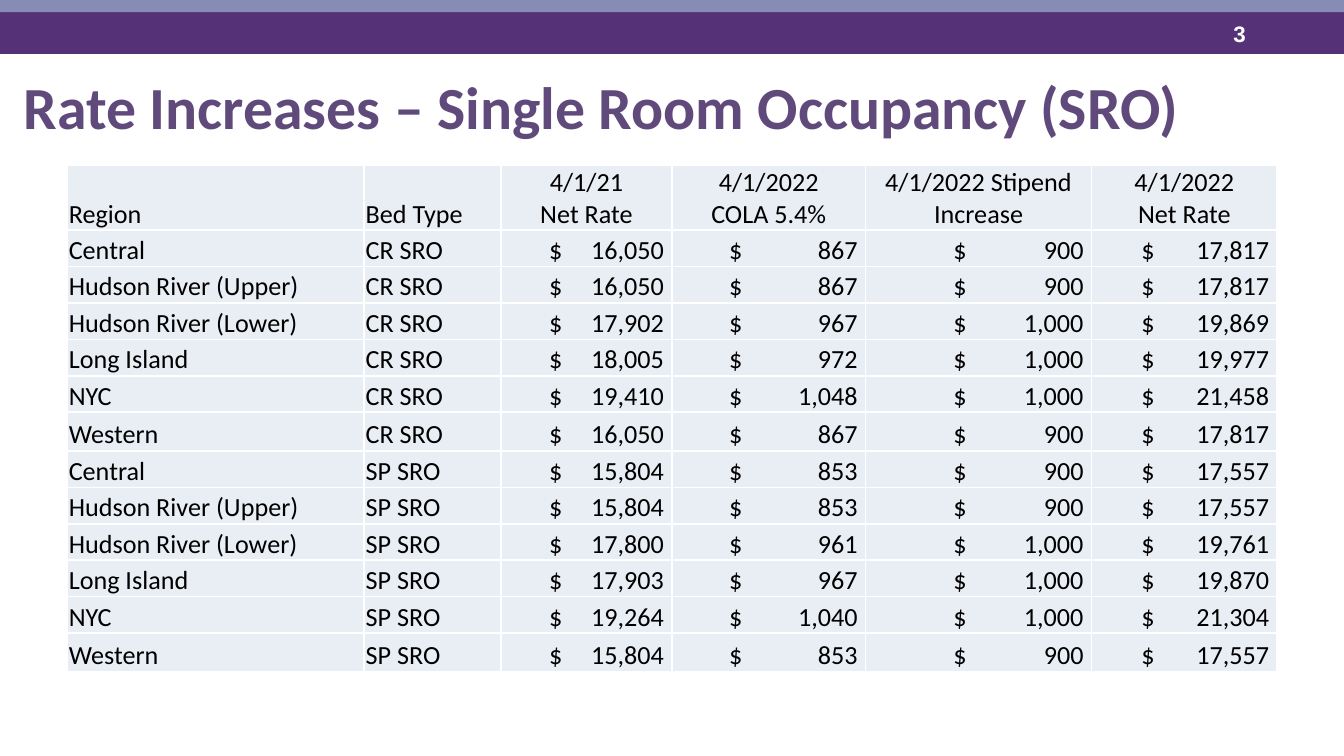
from lxml import etree
from pptx import Presentation
from pptx import util as u
from pptx.dml.color import RGBColor
from pptx.enum import shapes, text
from pptx.oxml import ns

COLORS = {
    "band": "553278",
    "stripe": "878CB4",
    "title": "604A7B",
    "cell": "E9EDF4",
    "ink": "000000",
    "white": "FFFFFF",
}

HEADERS = ["Region", "Bed Type", "4/1/21\nNet Rate", "4/1/2022\nCOLA 5.4%",
           "4/1/2022 Stipend Increase", "4/1/2022\nNet Rate"]
RATES = [
    ("Central", "CR SRO", 16050, 867, 900, 17817),
    ("Hudson River (Upper)", "CR SRO", 16050, 867, 900, 17817),
    ("Hudson River (Lower)", "CR SRO", 17902, 967, 1000, 19869),
    ("Long Island", "CR SRO", 18005, 972, 1000, 19977),
    ("NYC", "CR SRO", 19410, 1048, 1000, 21458),
    ("Western", "CR SRO", 16050, 867, 900, 17817),
    ("Central", "SP SRO", 15804, 853, 900, 17557),
    ("Hudson River (Upper)", "SP SRO", 15804, 853, 900, 17557),
    ("Hudson River (Lower)", "SP SRO", 17800, 961, 1000, 19761),
    ("Long Island", "SP SRO", 17903, 967, 1000, 19870),
    ("NYC", "SP SRO", 19264, 1040, 1000, 21304),
    ("Western", "SP SRO", 15804, 853, 900, 17557),
]
COL_WIDTHS = [5.61, 2.59, 3.23, 3.66, 4.27, 3.51]
DOLLAR_TABS = [None, None, 0.88, 1.05, 1.63, 0.91]
HEADER_HEIGHT, ROW_HEIGHT, GROUP_END_HEIGHT = 1.21, 0.69, 0.73
INSET = 0.03
AMOUNT_GAP = 0.15  # from the end of an amount to the cell's right edge


def rgb(name):
    return RGBColor.from_string(COLORS[name])


def style(p, font, size, color, bold=False):
    p.font.name = font
    p.font.size = u.Pt(size)
    p.font.bold = bold
    p.font.color.rgb = rgb(color)


def add_bar(s, x, y, w, h, color):
    sp = s.shapes.add_shape(shapes.MSO_SHAPE.RECTANGLE,
                            u.Cm(x), u.Cm(y), u.Cm(w), u.Cm(h))
    sp.shadow.inherit = False
    sp.fill.solid()
    sp.fill.fore_color.rgb = rgb(color)
    sp.line.fill.background()


def add_label(s, x, y, w, h, label, font, size, color):
    """Bold text, left-aligned and centred in the height of its box."""
    tf = s.shapes.add_textbox(u.Cm(x), u.Cm(y), u.Cm(w), u.Cm(h)).text_frame
    tf.word_wrap = True
    tf.vertical_anchor = text.MSO_ANCHOR.MIDDLE
    tf.text = label
    style(tf.paragraphs[0], font, size, color, bold=True)


def add_banner(s, x, y, w):
    add_bar(s, x, y + 0.18, w, 0.84, "band")
    add_label(s, x + w - 2.34, y + 0.25, 1.9, 0.76, "3", "Arial", 12, "white")
    add_bar(s, x, y, w, 0.23, "stripe")


def set_tabs(p, stops):
    tabs = etree.SubElement(p._p.get_or_add_pPr(), ns.qn("a:tabLst"))
    for pos, algn in stops:
        etree.SubElement(tabs, ns.qn("a:tab"), pos=str(u.Cm(pos)), algn=algn)


def set_borders(cell, color):
    tc_pr = cell._tc.get_or_add_tcPr()
    for i, side in enumerate(("lnL", "lnR", "lnT", "lnB")):
        ln = etree.Element(ns.qn(f"a:{side}"), w=str(u.Pt(1)))
        fill = etree.SubElement(ln, ns.qn("a:solidFill"))
        etree.SubElement(fill, ns.qn("a:srgbClr"), val=COLORS[color])
        tc_pr.insert(i, ln)


def fill_cell(cell, value, col, is_header):
    cell.margin_left = cell.margin_right = cell.margin_top = u.Cm(INSET)
    cell.margin_bottom = 0
    cell.vertical_anchor = text.MSO_ANCHOR.BOTTOM
    cell.fill.solid()
    cell.fill.fore_color.rgb = rgb("cell")
    set_borders(cell, "white")

    is_amount = isinstance(value, int)
    cell.text_frame.text = f"\t$\t{value:,}" if is_amount else value
    for p in cell.text_frame.paragraphs:
        if is_amount:
            end = COL_WIDTHS[col] - AMOUNT_GAP - INSET
            set_tabs(p, [(DOLLAR_TABS[col], "l"), (end, "r")])
        elif is_header and DOLLAR_TABS[col]:
            p.alignment = text.PP_ALIGN.CENTER
        style(p, "Calibri", 14, "ink")


def add_rate_table(s, x, y):
    heights = [HEADER_HEIGHT] + [
        GROUP_END_HEIGHT if row[0] == "Western" else ROW_HEIGHT for row in RATES]
    tbl = s.shapes.add_table(len(heights), len(COL_WIDTHS), u.Cm(x), u.Cm(y),
                             u.Cm(sum(COL_WIDTHS)), u.Cm(sum(heights))).table
    tbl.first_row = tbl.horz_banding = False
    for column, width in zip(tbl.columns, COL_WIDTHS):
        column.width = u.Cm(width)
    for row, height in zip(tbl.rows, heights):
        row.height = u.Cm(height)
    for r, values in enumerate([HEADERS, *RATES]):
        for c, value in enumerate(values):
            fill_cell(tbl.cell(r, c), value, c, is_header=r == 0)


def main():
    prs = Presentation()
    prs.slide_width, prs.slide_height = u.Cm(25.4), u.Cm(14.29)
    s = prs.slides.add_slide(prs.slide_layouts[6])
    add_banner(s, 0, 0, 25.4)
    add_label(s, 0.2, 1.22, 24.54, 1.57,
              "Rate Increases – Single Room Occupancy (SRO)", "Calibri", 32, "title")
    add_rate_table(s, 1.27, 3.13)
    prs.save("out.pptx")


if __name__ == "__main__":
    main()
